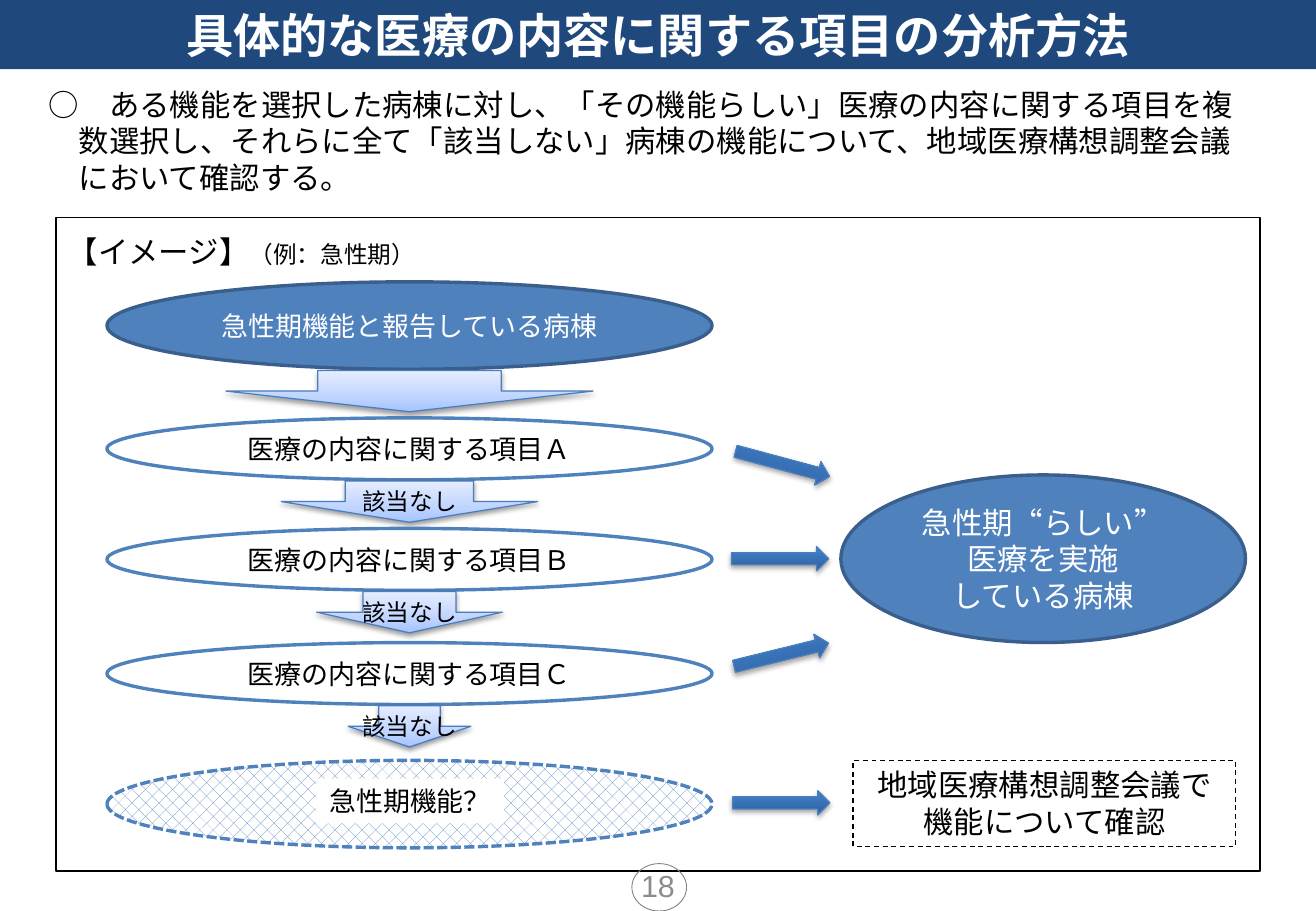
from lxml import etree
from pptx import Presentation
from pptx.dml.color import RGBColor
from pptx.enum.dml import MSO_LINE_DASH_STYLE as Dash, MSO_PATTERN_TYPE as Pattern
from pptx.enum.shapes import MSO_SHAPE as Shape
from pptx.enum.text import MSO_ANCHOR as Anchor, PP_ALIGN as Align
from pptx.oxml.ns import qn
from pptx.util import Inches, Pt

WHITE = RGBColor(0xFF, 0xFF, 0xFF)
BLACK = RGBColor(0x00, 0x00, 0x00)
NAVY = RGBColor(0x1F, 0x49, 0x7D)
BLUE = RGBColor(0x4F, 0x81, 0xBD)
DARK_BLUE = RGBColor(0x3A, 0x5F, 0x8C)
ARROW_LINE = RGBColor(0x4B, 0x7E, 0xBC)
GRAY = RGBColor(0x80, 0x80, 0x80)
NUMBER_GRAY = RGBColor(0x8C, 0x8C, 0x8C)

PALE_STOPS = [(0, RGBColor(0xA4, 0xC4, 0xFF)), (35, RGBColor(0xBF, 0xD4, 0xFF)),
              (100, RGBColor(0xE6, 0xEE, 0xFF))]
DEEP_STOPS = [(0, RGBColor(0x2F, 0x5F, 0x99)), (80, RGBColor(0x3D, 0x7C, 0xC7)),
              (100, RGBColor(0x3A, 0x7C, 0xCB))]

FONT = "Arial"
FLOW_LEFT, FLOW_WIDTH = 0.88, 4.98
FLOW_CENTER = FLOW_LEFT + FLOW_WIDTH / 2
ITEM_HEIGHT, END_HEIGHT = 0.51, 0.72
DOWN_HEIGHT, LABEL_WIDTH = 0.34, 1.75
CENTERED = {"alignment": Align.CENTER}
MIDDLE = {"vertical_anchor": Anchor.MIDDLE}


def apply(target, values):
    for name, value in values.items():
        setattr(target, name, value)


def add_runs(para, runs, color, bold=False):
    """Add (text, point size) runs to a paragraph."""
    for text, size in runs:
        span = para.add_run()
        span.text = text
        apply(span.font, {"name": FONT, "size": Pt(size), "bold": bold})
        span.font.color.rgb = color


def write(box, lines, color=BLACK, bold=False, frame=None, layout=CENTERED):
    """Fill a box; each line is a list of (text, point size) runs."""
    text_frame = box.text_frame
    apply(text_frame, {"word_wrap": True, "vertical_anchor": Anchor.TOP, **(frame or {})})
    for index, runs in enumerate(lines):
        para = text_frame.add_paragraph() if index else text_frame.paragraphs[0]
        apply(para, layout)
        add_runs(para, runs, color, bold)


def add_figure(page, kind, place, fill=None, line=None, width=1, dash=None):
    box = page.shapes.add_shape(kind, *map(Inches, place))
    box.shadow.inherit = False
    if fill is None:
        box.fill.background()
    else:
        box.fill.solid()
        box.fill.fore_color.rgb = fill
    if line is None:
        box.line.fill.background()
    else:
        box.line.color.rgb = line
        apply(box.line, {"width": Pt(width), "dash_style": dash})
    return box


def add_text(page, place, lines, **style):
    box = page.shapes.add_textbox(*map(Inches, place))
    write(box, lines, **style)


def add_color(parent, color):
    return etree.SubElement(parent, qn("a:srgbClr"), val=str(color))


def add_shadow(box, opacity, distance):
    effects = box._element.spPr.find(qn("a:effectLst"))
    shadow = etree.SubElement(effects, qn("a:outerShdw"), blurRad=str(Pt(3.1)),
                              dist=str(Pt(distance)), dir="5400000", rotWithShape="0")
    etree.SubElement(add_color(shadow, BLACK), qn("a:alpha"), val=str(opacity * 1000))


def add_block_arrow(page, kind, place, stops, opacity, distance, rotation=0):
    """Add a block arrow with an upward gradient and a soft shadow."""
    arrow = add_figure(page, kind, place, WHITE, ARROW_LINE, 0.75)
    arrow.rotation = rotation
    arrow.fill.gradient()
    arrow.fill.gradient_angle = 90
    stop_list = arrow._element.spPr.find(qn("a:gradFill")).find(qn("a:gsLst"))
    for old_stop in list(stop_list):
        stop_list.remove(old_stop)
    for percent, color in stops:
        stop = etree.SubElement(stop_list, qn("a:gs"), pos=str(percent * 1000))
        add_color(stop, color)
    add_shadow(arrow, opacity, distance)


def add_down_arrow(page, top, width, label=None):
    place = (FLOW_CENTER - width / 2, top, width, DOWN_HEIGHT)
    add_block_arrow(page, Shape.DOWN_ARROW, place, PALE_STOPS, 38, 1.6)
    if label:
        label_place = (FLOW_CENTER - LABEL_WIDTH / 2, top, LABEL_WIDTH, DOWN_HEIGHT)
        add_text(page, label_place, [[(label, 14)]])


def add_right_arrow(page, left, top, rotation=0):
    add_block_arrow(page, Shape.RIGHT_ARROW, (left, top, 0.8, 0.2),
                    DEEP_STOPS, 35, 1.8, rotation)


def add_heading(page):
    banner = add_figure(page, Shape.RECTANGLE, (0, 0, 10.83, 0.57), NAVY)
    write(banner, [[("具体的な医療の内容に関する項目の分析方法", 28)]], WHITE, True, MIDDLE)
    summary = ("○　ある機能を選択した病棟に対し、「その機能らしい」医療の内容に関する項目を"
               "複数選択し、それらに全て「該当しない」病棟の機能について、"
               "地域医療構想調整会議において確認する。")
    box = page.shapes.add_textbox(*map(Inches, (0.3, 0.66, 10.16, 1.01)))
    write(box, [[(summary, 18)]], layout={"alignment": Align.LEFT})
    properties = box.text_frame.paragraphs[0]._p.get_or_add_pPr()
    properties.set("marL", str(Inches(0.25)))
    properties.set("indent", str(Inches(-0.5)))


def add_frame(page):
    frame = add_figure(page, Shape.RECTANGLE, (0.46, 1.79, 9.91, 5.38), None, BLACK)
    write(frame, [[("【イメージ】", 18), ("（例：急性期）", 14)]],
          frame={"margin_top": Inches(0.13)}, layout={"alignment": Align.LEFT})


def add_flow(page):
    start = add_figure(page, Shape.OVAL, (FLOW_LEFT, 2.32, FLOW_WIDTH, END_HEIGHT),
                       BLUE, DARK_BLUE, 2)
    write(start, [[("急性期機能と報告している病棟", 16)]], WHITE, frame=MIDDLE)
    add_down_arrow(page, 3.05, 3.02)

    for letter, top, arrow_width in (("Ａ", 3.44, 2.11), ("Ｂ", 4.35, 1.53), ("Ｃ", 5.29, 1.01)):
        item = add_figure(page, Shape.OVAL, (FLOW_LEFT, top, FLOW_WIDTH, ITEM_HEIGHT),
                          WHITE, BLUE, 2)
        write(item, [[("医療の内容に関する項目" + letter, 16)]], frame=MIDDLE)
        add_down_arrow(page, top + ITEM_HEIGHT + 0.01, arrow_width, "該当なし")

    doubtful = add_figure(page, Shape.OVAL, (FLOW_LEFT, 6.26, FLOW_WIDTH, END_HEIGHT),
                          WHITE, BLUE, 2, Dash.SQUARE_DOT)
    doubtful.fill.patterned()
    doubtful.fill.pattern = Pattern.PERCENT_25
    doubtful.fill.fore_color.rgb = BLUE
    doubtful.fill.back_color.rgb = WHITE
    question = add_figure(page, Shape.RECTANGLE, (2.6, 6.41, 1.55, 0.37), WHITE)
    write(question, [[("急性期機能？", 16)]], frame={"word_wrap": False})


def add_outcomes(page):
    for left, top, rotation in ((6.04, 3.72, 15), (6.02, 4.5, 0),
                                (6.03, 5.29, 346.2), (6.03, 6.51, 0)):
        add_right_arrow(page, left, top, rotation)
    acute = add_figure(page, Shape.OVAL, (6.92, 3.91, 3.33, 1.38), BLUE, DARK_BLUE, 2)
    lines = ("急性期“らしい”", "医療を実施", "している病棟")
    write(acute, [[(line, 18)] for line in lines], WHITE, frame=MIDDLE)
    review = add_figure(page, Shape.RECTANGLE, (7.02, 6.26, 3.15, 0.71),
                        None, BLACK, 0.75, Dash.DASH)
    write(review, [[("地域医療構想調整会議で機能について確認", 18)]])


def add_page_number(page):
    add_text(page, (0, 6.97, 10.83, 0.47), [[("18", 18)]], color=NUMBER_GRAY,
             frame={"vertical_anchor": Anchor.BOTTOM, "margin_bottom": 0})
    add_figure(page, Shape.OVAL, (5.2, 7.11, 0.45, 0.39), None, GRAY, 0.5)


def main():
    deck = Presentation()
    apply(deck, {"slide_width": Inches(10.83), "slide_height": Inches(7.5)})
    page = deck.slides.add_slide(deck.slide_layouts[6])
    add_heading(page)
    add_frame(page)
    add_flow(page)
    add_outcomes(page)
    add_page_number(page)
    deck.save("out.pptx")


if __name__ == "__main__":
    main()
